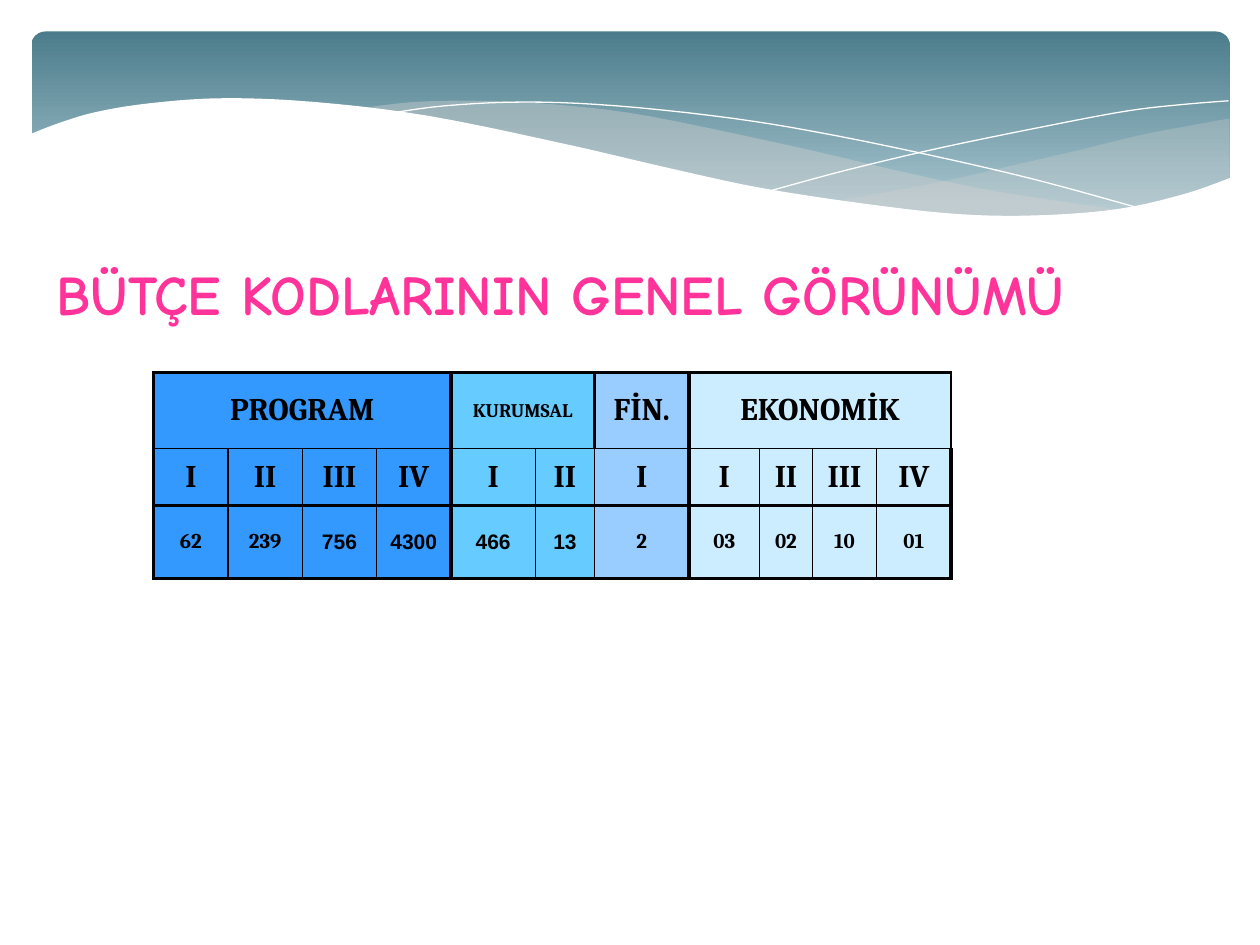
from lxml.etree import SubElement
from pptx import Presentation
from pptx.dml.color import RGBColor
from pptx.enum.shapes import MSO_SHAPE
from pptx.enum.text import MSO_ANCHOR, PP_ALIGN
from pptx.oxml.ns import qn
from pptx.util import Inches, Pt

WHITE = RGBColor(0xFF, 0xFF, 0xFF)
BLACK = RGBColor(0, 0, 0)
PINK = RGBColor(0xFF, 0x33, 0x99)
TEAL = RGBColor(0x4C, 0x7C, 0x8B)
PALE_TEAL = RGBColor(0xA8, 0xC6, 0xD0)
GREY = RGBColor(0xD4, 0xD2, 0xD0)
BLUE = RGBColor(0x33, 0x99, 0xFF)
SKY = RGBColor(0x66, 0xCC, 0xFF)
PERIWINKLE = RGBColor(0x99, 0xCC, 0xFF)
ICE = RGBColor(0xCC, 0xEC, 0xFF)

# Wave edges, left to right, in inches
RIGHT_WAVE_TOP = [(6.61, 1.6), (7.06, 1.52), (7.53, 1.43), (8.05, 1.31), (8.61, 1.18),
                  (9.06, 1.07), (9.48, 0.99), (9.76, 0.94)]
RIGHT_WAVE_BOTTOM = [(6.61, 1.6), (7.05, 1.65), (7.57, 1.7), (8.14, 1.72), (8.63, 1.7),
                     (9.05, 1.63), (9.42, 1.54), (9.76, 1.41)]
MIDDLE_WAVE_TOP = [(2.86, 0.86), (3.28, 0.81), (3.8, 0.8), (4.42, 0.83), (5.14, 0.92),
                   (6.29, 1.16), (7.06, 1.34), (7.75, 1.49), (8.37, 1.59), (8.93, 1.67)]
MIDDLE_WAVE_BOTTOM = [(2.86, 0.86), (3.42, 0.94), (4.04, 1.06), (4.91, 1.26), (5.66, 1.43),
                      (6.5, 1.58), (7.22, 1.68), (8.07, 1.73), (8.93, 1.67)]
FALLING_LINE = [(3.09, 0.9), (3.53, 0.84), (4.16, 0.81), (4.89, 0.84), (5.82, 0.94),
                (6.65, 1.08), (7.6, 1.28), (8.31, 1.45), (9.07, 1.66)]
RISING_LINE = [(6.13, 1.51), (6.72, 1.35), (7.48, 1.17), (8.36, 0.99), (8.95, 0.88),
               (9.38, 0.83), (9.75, 0.8)]
COVER_TOP = [(0.23, 1.07), (0.46, 0.98), (0.76, 0.89), (1.19, 0.82), (1.77, 0.78),
             (2.5, 0.81), (3.4, 0.92), (4.47, 1.14), (5.29, 1.33), (6.03, 1.49),
             (6.88, 1.62), (7.61, 1.7), (8.23, 1.71), (8.87, 1.66), (9.4, 1.54), (9.77, 1.41)]

# Code groups: name, name size, fill, level names, codes
GROUPS = [
    ("PROGRAM", 18, BLUE, ["I", "II", "III", "IV"], ["62", "239", "756", "4300"]),
    ("KURUMSAL", 11, SKY, ["I", "II"], ["466", "13"]),
    ("FİN.", 18, PERIWINKLE, ["I"], ["2"]),
    ("EKONOMİK", 18, ICE, ["I", "II", "III", "IV"], ["03", "02", "10", "01"]),
]
COLUMN_WIDTHS = [0.59, 0.59, 0.59, 0.59, 0.67, 0.47, 0.75, 0.56, 0.42, 0.51, 0.59]
ROW_HEIGHTS = [0.6, 0.45, 0.58]
ARIAL_CODES = {"756", "4300", "466", "13"}


def smooth(points, steps=5):
    """Catmull-Rom curve through the points."""
    padded = [points[0], *points, points[-1]]
    curve = [points[0]]
    for a, b, c, d in zip(padded, padded[1:], padded[2:], padded[3:]):
        for step in range(1, steps + 1):
            t = step / steps
            curve.append(tuple(
                (2 * q + (r - p) * t + (2 * p - 5 * q + 4 * r - s) * t ** 2
                 + (3 * q - p - 3 * r + s) * t ** 3) / 2
                for p, q, r, s in zip(a, b, c, d)))
    return curve


def add_freeform(s, points, fill=None, opacity=100, line=None):
    emu = [(Inches(x), Inches(y)) for x, y in points]
    builder = s.shapes.build_freeform(*emu[0])
    builder.add_line_segments(emu[1:], close=fill is not None)
    sp = builder.convert_to_shape()
    sp.shadow.inherit = False
    if fill is None:
        sp.fill.background()
    else:
        sp.fill.solid()
        sp.fill.fore_color.rgb = fill
        if opacity < 100:
            color = sp.fill._xPr.find(qn("a:solidFill"))[0]
            SubElement(color, qn("a:alpha"), val=str(opacity * 1000))
    if line is None:
        sp.line.fill.background()
    else:
        sp.line.color.rgb = line
        sp.line.width = Pt(0)


def write(tf, text, size=18, font="Cambria", color=BLACK, align=PP_ALIGN.LEFT,
          spacing=None, after=None):
    p = tf.paragraphs[0]
    p.alignment = align
    p.line_spacing = spacing
    p.space_after = after
    r = p.add_run()
    r.text = text
    r.font.size = Pt(size)
    r.font.name = font
    r.font.bold = True
    r.font.color.rgb = color


def add_header(s):
    sp = s.shapes.add_shape(MSO_SHAPE.ROUNDED_RECTANGLE, Inches(0.25), Inches(0.25),
                            Inches(9.51), Inches(1.56))
    sp.adjustments[0] = 0.07
    sp.shadow.inherit = False
    sp.line.fill.background()
    sp.fill.gradient()
    sp.fill.gradient_angle = 270
    for stop, color, position in zip(sp.fill.gradient_stops, (TEAL, PALE_TEAL), (0, 0.9)):
        stop.color.rgb = color
        stop.position = position

    # Translucent waves, thin lines and the white lower edge
    add_freeform(s, smooth(RIGHT_WAVE_TOP) + smooth(RIGHT_WAVE_BOTTOM)[::-1], GREY, 29)
    add_freeform(s, smooth(MIDDLE_WAVE_TOP) + smooth(MIDDLE_WAVE_BOTTOM)[::-1], GREY, 40)
    for points in (FALLING_LINE, RISING_LINE):
        add_freeform(s, smooth(points), line=WHITE)
    add_freeform(s, smooth(COVER_TOP) + [(9.77, 2.24), (0.23, 2.24)], WHITE)


def add_title(s, text):
    tf = s.shapes.add_textbox(Inches(0.35), Inches(1.23), Inches(9.65), Inches(1.48)).text_frame
    tf.word_wrap = True
    tf.margin_top = Inches(0.75)
    write(tf, text, size=32, font="Comic Neue", color=PINK, spacing=1.15, after=Pt(10))


def set_borders(cell, left, top, right, bottom):
    tcPr = cell._tc.get_or_add_tcPr()
    for i, (side, width) in enumerate(zip("LRTB", (left, right, top, bottom))):
        ln = tcPr.makeelement(qn(f"a:ln{side}"), {"w": str(Pt(width))})
        SubElement(SubElement(ln, qn("a:solidFill")), qn("a:srgbClr"), val=str(BLACK))
        tcPr.insert(i, ln)


def fill_cell(cell, text, fill, **text_format):
    cell.fill.solid()
    cell.fill.fore_color.rgb = fill
    cell.vertical_anchor = MSO_ANCHOR.MIDDLE
    if text:
        write(cell.text_frame, text, align=PP_ALIGN.CENTER, **text_format)


def add_code_table(s):
    table = s.shapes.add_table(len(ROW_HEIGHTS), len(COLUMN_WIDTHS), Inches(1.22), Inches(2.96),
                               Inches(sum(COLUMN_WIDTHS)), Inches(sum(ROW_HEIGHTS))).table
    table.first_row = table.horz_banding = False
    for column, width in zip(table.columns, COLUMN_WIDTHS):
        column.width = Inches(width)
    for row, height in zip(table.rows, ROW_HEIGHTS):
        row.height = Inches(height)

    first = 0
    for name, size, fill, levels, codes in GROUPS:
        last = first + len(levels) - 1
        for i, (level, code) in enumerate(zip(levels, codes)):
            col = first + i
            font = "Arial" if code in ARIAL_CODES else "Cambria"
            fill_cell(table.cell(0, col), "" if i else name, fill, size=size)
            fill_cell(table.cell(1, col), level, fill)
            fill_cell(table.cell(2, col), code, fill, size=12, font=font)
            for row in range(3):
                # Heavy lines around groups; a thin one left of the FİN. levels
                left = 2 if col == first and (row == 0 or name != "FİN.") else 1
                right = 2 if col == last and (row == 0 or name != "KURUMSAL") else 1
                set_borders(table.cell(row, col), left, 1 if row == 1 else 2,
                            right, 1 if row == 0 else 2)
        if last > first:
            table.cell(0, first).merge(table.cell(0, last))
        first = last + 1


def main():
    prs = Presentation()
    prs.slide_width, prs.slide_height = Inches(10), Inches(7.5)
    s = prs.slides.add_slide(prs.slide_layouts[6])
    add_header(s)
    add_title(s, "BÜTÇE KODLARININ GENEL GÖRÜNÜMÜ")
    add_code_table(s)
    prs.save("out.pptx")


if __name__ == "__main__":
    main()
